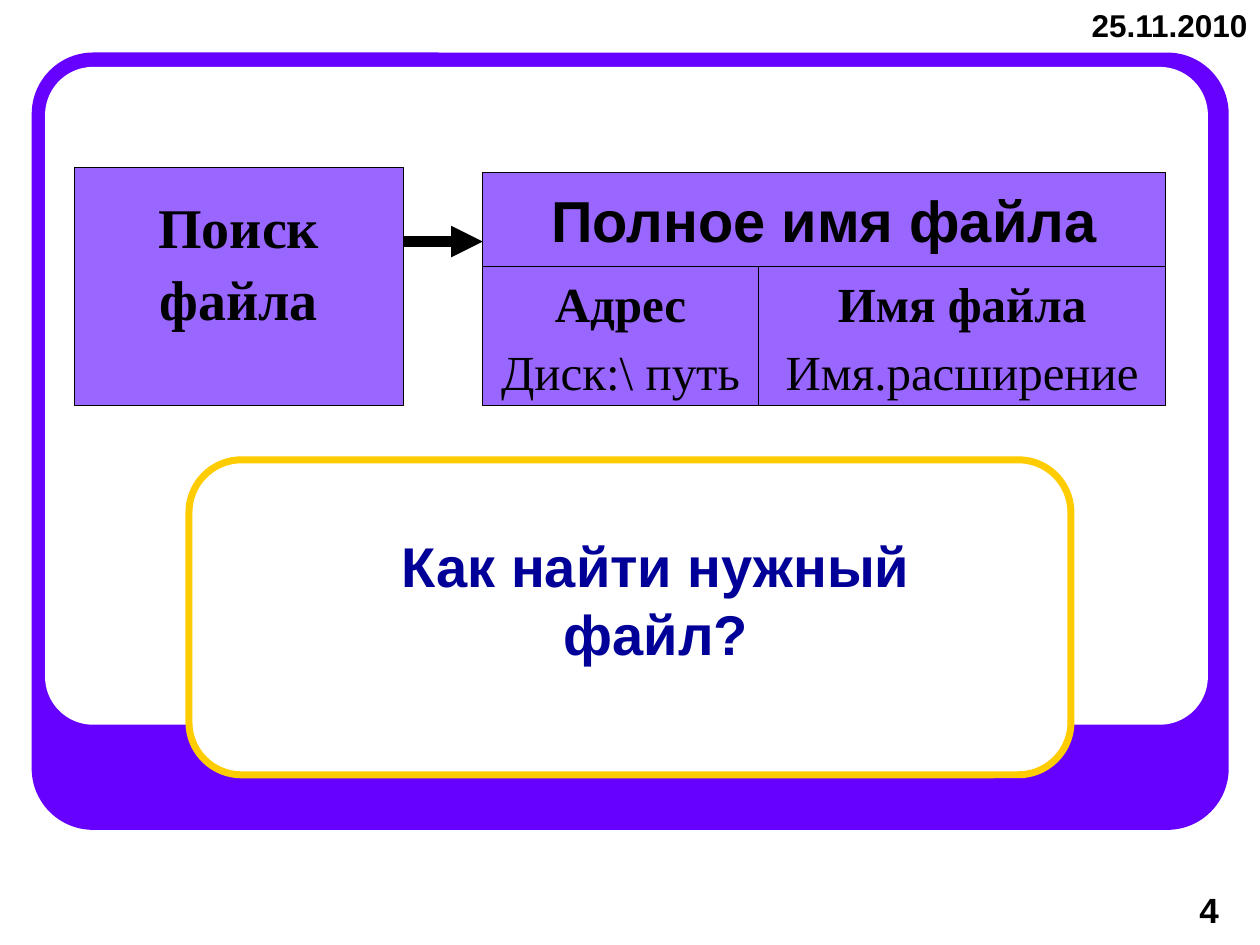
from lxml.etree import SubElement
from pptx import Presentation
from pptx.dml.color import RGBColor
from pptx.enum.shapes import MSO_CONNECTOR, MSO_SHAPE
from pptx.enum.text import MSO_ANCHOR, MSO_AUTO_SIZE, PP_ALIGN
from pptx.oxml.ns import qn
from pptx.util import Cm, Pt

BLACK, WHITE, VIOLET, LILAC, GOLD, NAVY = (
    "000000", "FFFFFF", "6600FF", "9966FF", "FFCC00", "000099")
SERIF = "Times New Roman"

# Left, top, width, height in cm; corner rounding; fill; line colour
PANELS = [
    ((0.64, 1.06, 24.13, 15.67), 0.079, VIOLET, None),
    ((0.91, 1.35, 23.44, 13.26), 0.073, WHITE, None),
    ((3.81, 9.27, 17.78, 6.35), 0.167, WHITE, GOLD),
]
SEARCH_BOX = (1.5, 3.38, 6.63, 4.8)
SEARCH_LINES = [("Поиск", True), ("файла", True)]
FULL_NAME = "Полное имя файла"
NAME_LEFT, NAME_TOP, NAME_HEIGHT = 9.73, 3.48, 1.9
PARTS_HEIGHT = 2.8
NAME_PARTS = [
    (5.56, [("Адрес", True), ("Диск:\\ путь", False)]),
    (8.21, [("Имя файла", True), ("Имя.расширение", False)]),
]
ARROW_Y = 4.87
QUESTION = "Как найти нужный файл?"
QUESTION_BOX = (5.92, 10.59, 14.6, 2.97)
DATE, DATE_BOX = "25.11.2010", (20.95, 0, 4.45, 1.27)
NUMBER, NUMBER_BOX = "4", (23.93, 17.78, 1.47, 1.27)


def color(value):
    return RGBColor.from_string(value)


def lengths(box):
    return [Cm(value) for value in box]


def write(shape, lines, size, font="Arial", ink=BLACK, align=PP_ALIGN.CENTER,
          anchor=MSO_ANCHOR.TOP, spacing=1.0, before=0, top=0.13):
    """Fill a shape with (text, bold) paragraphs."""
    frame = shape.text_frame
    frame.word_wrap = True
    frame.auto_size = MSO_AUTO_SIZE.NONE
    frame.vertical_anchor = anchor
    frame.margin_left = frame.margin_right = Cm(0.25)
    frame.margin_top, frame.margin_bottom = Cm(top), Cm(0.13)
    for index, (text, bold) in enumerate(lines):
        paragraph = frame.add_paragraph() if index else frame.paragraphs[0]
        paragraph.alignment = align
        paragraph.line_spacing = spacing
        paragraph.space_before = Pt(before)
        run = paragraph.add_run()
        run.text = text
        run.font.name, run.font.size, run.font.bold = font, Pt(size), bold
        run.font.color.rgb = color(ink)


def add_box(slide, box, fill, line=None, width=0.75, rounding=None):
    kind = MSO_SHAPE.ROUNDED_RECTANGLE if rounding else MSO_SHAPE.RECTANGLE
    shape = slide.shapes.add_shape(kind, *lengths(box))
    shape.shadow.inherit = False
    if rounding:
        shape.adjustments[0] = rounding
    shape.fill.solid()
    shape.fill.fore_color.rgb = color(fill)
    if line:
        shape.line.color.rgb = color(line)
        shape.line.width = Pt(width)
    else:
        shape.line.fill.background()
    return shape


def add_arrow(slide, start, end, y):
    arrow = slide.shapes.add_connector(
        MSO_CONNECTOR.STRAIGHT, *lengths((start, y, end, y)))
    arrow.line.color.rgb = color(BLACK)
    arrow.line.width = Pt(6)
    SubElement(arrow.line._get_or_add_ln(), qn("a:tailEnd"), type="triangle")
    SubElement(arrow._element.spPr, qn("a:effectLst"))


def main():
    presentation = Presentation()
    presentation.slide_width, presentation.slide_height = Cm(25.4), Cm(19.05)
    slide = presentation.slides.add_slide(presentation.slide_layouts[5])
    title = slide.shapes.title

    for box, rounding, fill, line in PANELS:
        add_box(slide, box, fill, line, width=4, rounding=rounding)

    search = add_box(slide, SEARCH_BOX, LILAC, BLACK)
    write(search, SEARCH_LINES, 32, SERIF, spacing=0.9, before=6.4, top=0.65)

    name_width = sum(width for width, _ in NAME_PARTS)
    full_name = add_box(
        slide, (NAME_LEFT, NAME_TOP, name_width, NAME_HEIGHT), LILAC, BLACK)
    write(full_name, [(FULL_NAME, True)], 33, anchor=MSO_ANCHOR.MIDDLE)

    left = NAME_LEFT
    for width, lines in NAME_PARTS:
        part = add_box(
            slide, (left, NAME_TOP + NAME_HEIGHT, width, PARTS_HEIGHT),
            LILAC, BLACK)
        write(part, lines, 28, SERIF, before=5.6)
        left += width

    add_arrow(slide, SEARCH_BOX[0] + SEARCH_BOX[2], NAME_LEFT, ARROW_Y)

    title.left, title.top, title.width, title.height = lengths(QUESTION_BOX)
    write(title, [(QUESTION, True)], 32, ink=NAVY, anchor=MSO_ANCHOR.MIDDLE)
    slide.shapes._spTree.append(title._element)  # in front of the panels

    for text, box, size, align in [
            (DATE, DATE_BOX, 18, PP_ALIGN.RIGHT),
            (NUMBER, NUMBER_BOX, 20, PP_ALIGN.LEFT)]:
        label = slide.shapes.add_textbox(*lengths(box))
        write(label, [(text, True)], size, align=align)

    presentation.save("out.pptx")


if __name__ == "__main__":
    main()
